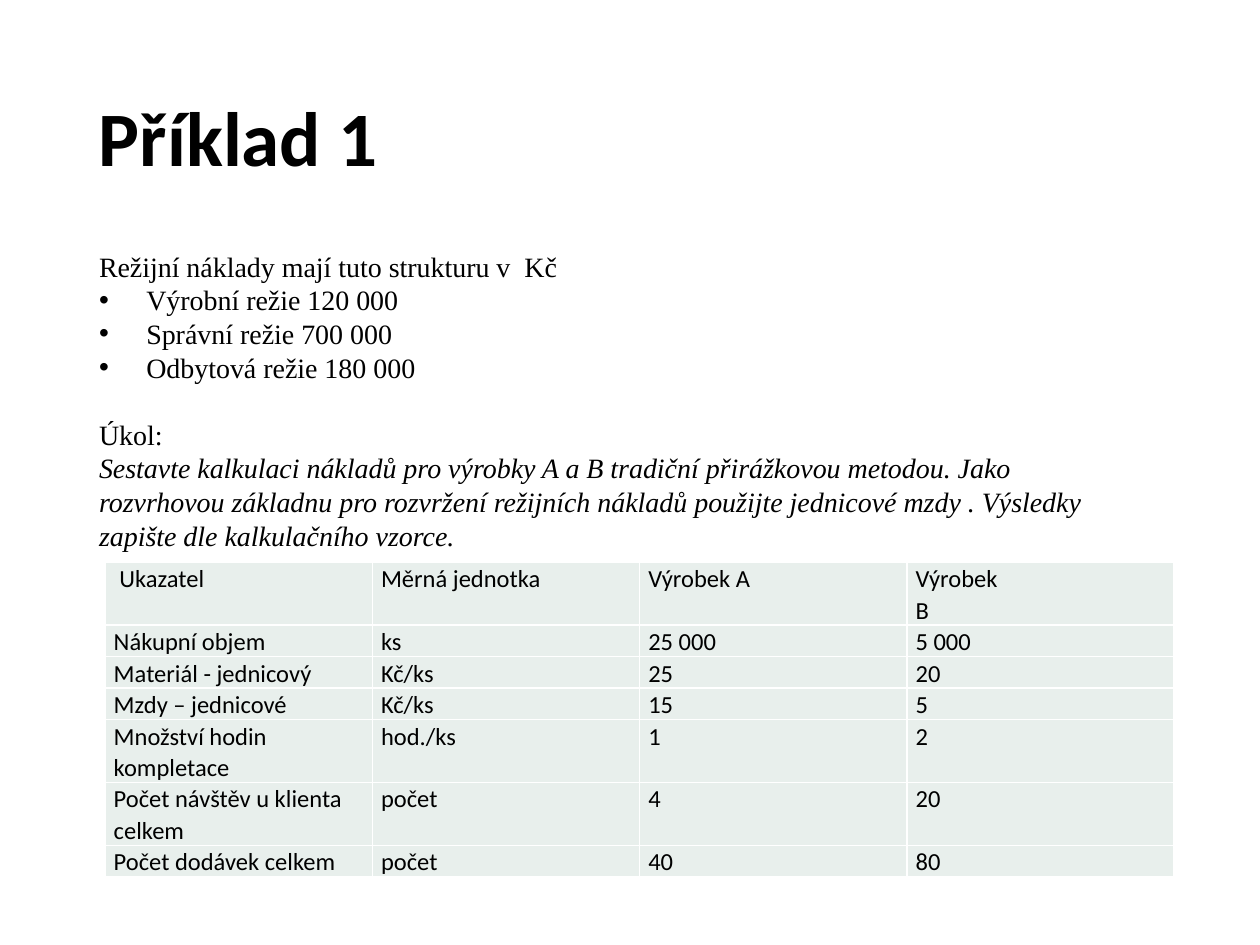
from lxml import etree
from pptx import Presentation
from pptx.dml.color import RGBColor
from pptx.enum.text import MSO_ANCHOR
from pptx.oxml.ns import qn
from pptx.util import Pt

MIDDLE = MSO_ANCHOR.MIDDLE
BLACK = "000000"
WHITE = "FFFFFF"
CELL_FILL = "E8EFEC"
HEADING_FONT = "Calibri"
BODY_FONT = "Times New Roman"
BODY_SIZE = 16
BULLET_INDENT = 27

OVERHEADS = ["Výrobní režie 120 000", "Správní režie 700 000", "Odbytová režie 180 000"]
TASK = (
    "Sestavte kalkulaci nákladů pro výrobky A a B tradiční přirážkovou metodou. "
    "Jako rozvrhovou základnu pro rozvržení režijních nákladů použijte jednicové mzdy . "
    "Výsledky zapište dle kalkulačního vzorce."
)
ROWS = [
    [" Ukazatel", "Měrná jednotka", "Výrobek A", "Výrobek\nB"],
    ["Nákupní objem", "ks", "25 000", "5 000"],
    ["Materiál - jednicový", "Kč/ks", "25", "20"],
    ["Mzdy – jednicové", "Kč/ks", "15", "5"],
    ["Množství hodin kompletace", "hod./ks", "1", "2"],
    ["Počet návštěv u klienta celkem", "počet", "4", "20"],
    ["Počet dodávek celkem", "počet", "40", "80"],
]


def color(value):
    return RGBColor.from_string(value)


def next_paragraph(text_frame):
    first = text_frame.paragraphs[0]
    return text_frame.add_paragraph() if first.runs else first


def add_run(paragraph, text, size, font, bold=False, italic=False):
    run = paragraph.add_run()
    run.text = text
    run.font.size = Pt(size)
    run.font.name = font
    run.font.bold = bold
    run.font.italic = italic
    run.font.color.rgb = color(BLACK)


def add_text_box(slide, left, top, width, height):
    shape = slide.shapes.add_textbox(Pt(left), Pt(top), Pt(width), Pt(height))
    shape.text_frame.word_wrap = True
    return shape.text_frame


def add_bullet(paragraph):
    properties = paragraph._p.get_or_add_pPr()
    properties.set("marL", str(Pt(BULLET_INDENT)))
    properties.set("indent", str(-Pt(BULLET_INDENT)))
    etree.SubElement(properties, qn("a:buFont")).set("typeface", "Arial")
    etree.SubElement(properties, qn("a:buChar")).set("char", "•")


def add_title(slide):
    text_frame = add_text_box(slide, 49.5, 28.75, 621, 104.5)
    text_frame.vertical_anchor = MIDDLE
    paragraph = text_frame.paragraphs[0]
    paragraph.line_spacing = 0.9
    add_run(paragraph, "Příklad 1", 44, HEADING_FONT, bold=True)


def add_assignment(slide):
    text_frame = add_text_box(slide, 49.5, 139, 600, 196.5)
    add_run(text_frame.paragraphs[0], "Režijní náklady mají tuto strukturu v  Kč", BODY_SIZE, BODY_FONT)
    for overhead in OVERHEADS:
        paragraph = next_paragraph(text_frame)
        add_bullet(paragraph)
        add_run(paragraph, overhead, BODY_SIZE, BODY_FONT)
    heading = next_paragraph(text_frame)
    heading.space_before = Pt(19.2)
    add_run(heading, "Úkol:", BODY_SIZE, BODY_FONT)
    add_run(next_paragraph(text_frame), TASK, BODY_SIZE, BODY_FONT, italic=True)


def add_borders(cell):
    properties = cell._tc.get_or_add_tcPr()
    for side in ("a:lnL", "a:lnR", "a:lnT", "a:lnB"):
        line = etree.SubElement(properties, qn(side), w=str(Pt(1)))
        fill = etree.SubElement(line, qn("a:solidFill"))
        etree.SubElement(fill, qn("a:srgbClr")).set("val", WHITE)


def fill_cell(cell, text):
    add_borders(cell)
    cell.fill.solid()
    cell.fill.fore_color.rgb = color(CELL_FILL)
    cell.margin_left = cell.margin_right = Pt(5)
    cell.margin_top = cell.margin_bottom = Pt(0)
    for line in text.split("\n"):
        paragraph = next_paragraph(cell.text_frame)
        paragraph.line_spacing = 1.07
        add_run(paragraph, line, 14, HEADING_FONT)


def add_indicator_table(slide):
    column_count = len(ROWS[0])
    shape = slide.shapes.add_table(
        len(ROWS), column_count, Pt(60), Pt(321.25), Pt(611), Pt(18 * len(ROWS))
    )
    for row_index, row in enumerate(ROWS):
        for column_index, text in enumerate(row):
            fill_cell(shape.table.cell(row_index, column_index), text)


def main():
    presentation = Presentation()
    presentation.slide_width = Pt(720)
    presentation.slide_height = Pt(540)
    slide = presentation.slides.add_slide(presentation.slide_layouts[6])
    add_title(slide)
    add_indicator_table(slide)
    add_assignment(slide)
    presentation.save("out.pptx")


if __name__ == "__main__":
    main()
